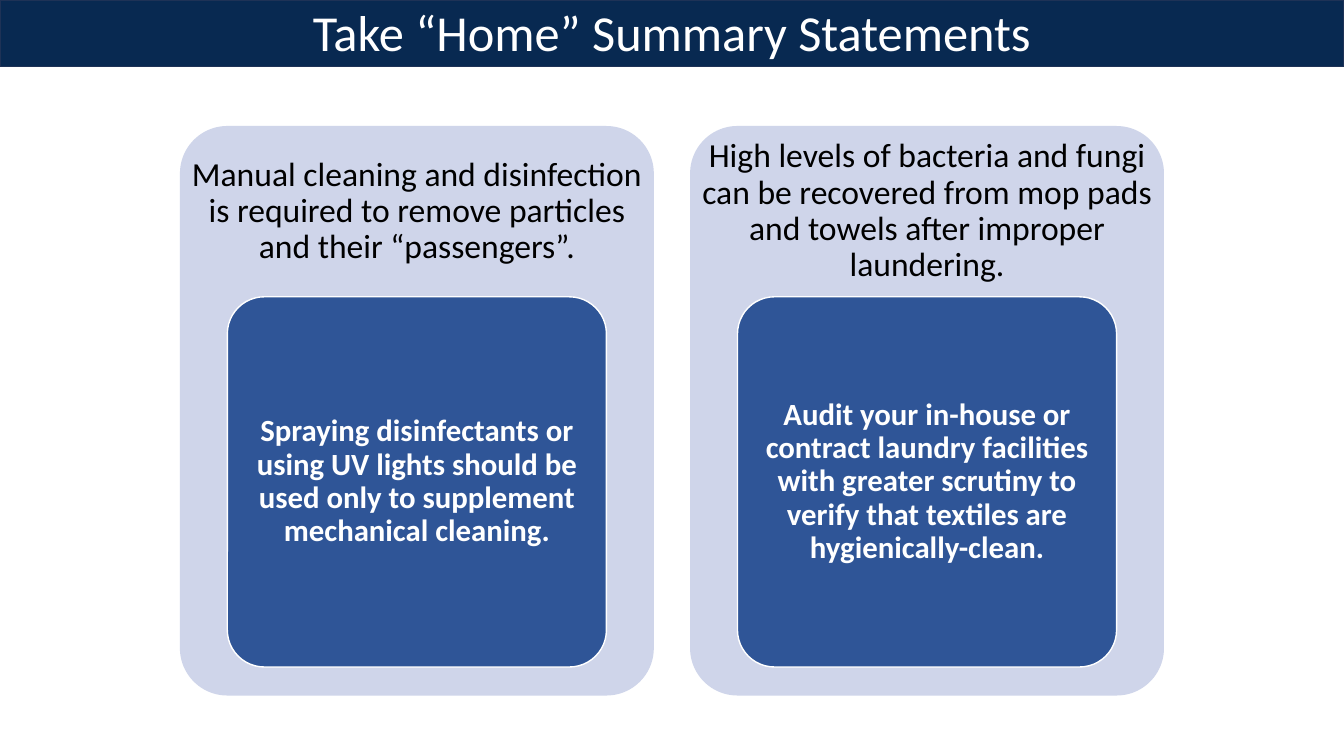
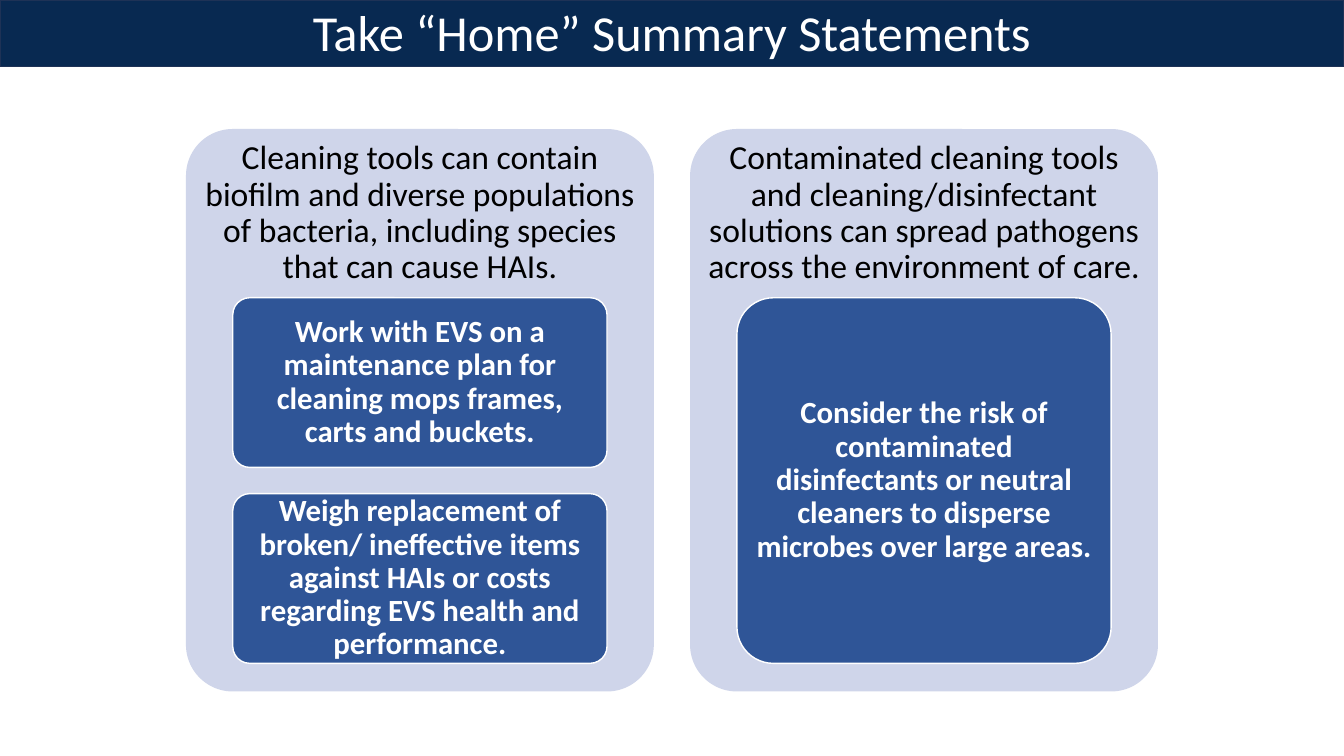
"""Build two summary slides, each with two panels of statement cards."""
from pptx import Presentation
from pptx.dml.color import RGBColor
from pptx.enum.shapes import MSO_SHAPE as Shape
from pptx.enum.text import MSO_ANCHOR as Anchor, PP_ALIGN as Align
from pptx.util import Inches, Pt

NAVY, NAVY_EDGE = "082951", "1E3256"
PANEL, CARD = "CFD5EA", "2F5597"
WHITE, BLACK = "FFFFFF", "000000"
FONT = "Calibri"
TITLE = "Take “Home” Summary Statements"
SLIDE_WIDTH, SLIDE_HEIGHT = 13.33, 7.5
PANEL_GAP, CARD_GAP = 0.36, 0.26

SLIDES = [
    (1.25, 4.7, 5.65, [
        ("Manual cleaning and disinfection is required to remove particles and their “passengers”.",
         ["Spraying disinfectants or using UV lights should be used only to supplement "
          "mechanical cleaning."]),
        ("High levels of bacteria and fungi can be recovered from mop pads and towels after "
         "improper laundering.",
         ["Audit your in-house or contract laundry facilities with greater scrutiny to verify "
          "that textiles are hygienically-clean."]),
    ]),
    (1.28, 4.64, 5.58, [
        ("Cleaning tools can contain biofilm and diverse populations of bacteria, including "
         "species that can cause HAIs.",
         ["Work with EVS on a maintenance plan for cleaning mops frames, carts and buckets.",
          "Weigh replacement of broken/ ineffective items against HAIs or costs regarding EVS "
          "health and performance."]),
        ("Contaminated cleaning tools and cleaning/disinfectant solutions can spread pathogens "
         "across the environment of care.",
         ["Consider the risk of contaminated disinfectants or neutral cleaners to disperse "
          "microbes over large areas."]),
    ]),
]


def add_block(page, kind, left, top, width, height, fill, edge=None):
    block = page.shapes.add_shape(kind, Inches(left), Inches(top), Inches(width), Inches(height))
    block.shadow.inherit = False
    block.fill.solid()
    block.fill.fore_color.rgb = RGBColor.from_string(fill)
    if edge:
        block.line.color.rgb = RGBColor.from_string(edge)
        block.line.width = Pt(1)
    else:
        block.line.fill.background()
    if kind == Shape.ROUNDED_RECTANGLE:
        block.adjustments[0] = 0.1
    return block


def write(box, text, size, color, side=0.1, edge=0.05, bold=False):
    frame = box.text_frame
    frame.word_wrap = True
    frame.vertical_anchor = Anchor.MIDDLE
    frame.margin_left = frame.margin_right = Inches(side)
    frame.margin_top = frame.margin_bottom = Inches(edge)
    para = frame.paragraphs[0]
    para.text = text
    para.alignment = Align.CENTER
    para.line_spacing = 0.9
    para.font.name = FONT
    para.font.size = Pt(size)
    para.font.bold = bold
    para.font.color.rgb = RGBColor.from_string(color)


deck = Presentation()
deck.slide_width, deck.slide_height = Inches(SLIDE_WIDTH), Inches(SLIDE_HEIGHT)

for top, width, height, panels in SLIDES:
    page = deck.slides.add_slide(deck.slide_layouts[6])
    add_block(page, Shape.RECTANGLE, 0, 0, SLIDE_WIDTH, 0.66, NAVY, NAVY_EDGE)
    title = page.shapes.add_textbox(Inches(0.66), Inches(0.14), Inches(12.01), Inches(0.41))
    write(title, TITLE, 36, WHITE)

    first_left = (SLIDE_WIDTH - 2 * width - PANEL_GAP) / 2
    heading_height = 0.3 * height
    for column, (heading, cards) in enumerate(panels):
        left = first_left + column * (width + PANEL_GAP)
        add_block(page, Shape.ROUNDED_RECTANGLE, left, top, width, height, PANEL)
        box = page.shapes.add_textbox(Inches(left), Inches(top),
                                      Inches(width), Inches(heading_height))
        write(box, heading, 24, BLACK, edge=0.1)

        card_height = (0.65 * height - (len(cards) - 1) * CARD_GAP) / len(cards)
        for row, statement in enumerate(cards):
            card_top = top + heading_height + row * (card_height + CARD_GAP)
            card = add_block(page, Shape.ROUNDED_RECTANGLE, left + 0.1 * width, card_top,
                             0.8 * width, card_height, CARD, WHITE)
            write(card, statement, 22, WHITE, side=0.06, bold=True)

deck.save("out.pptx")
